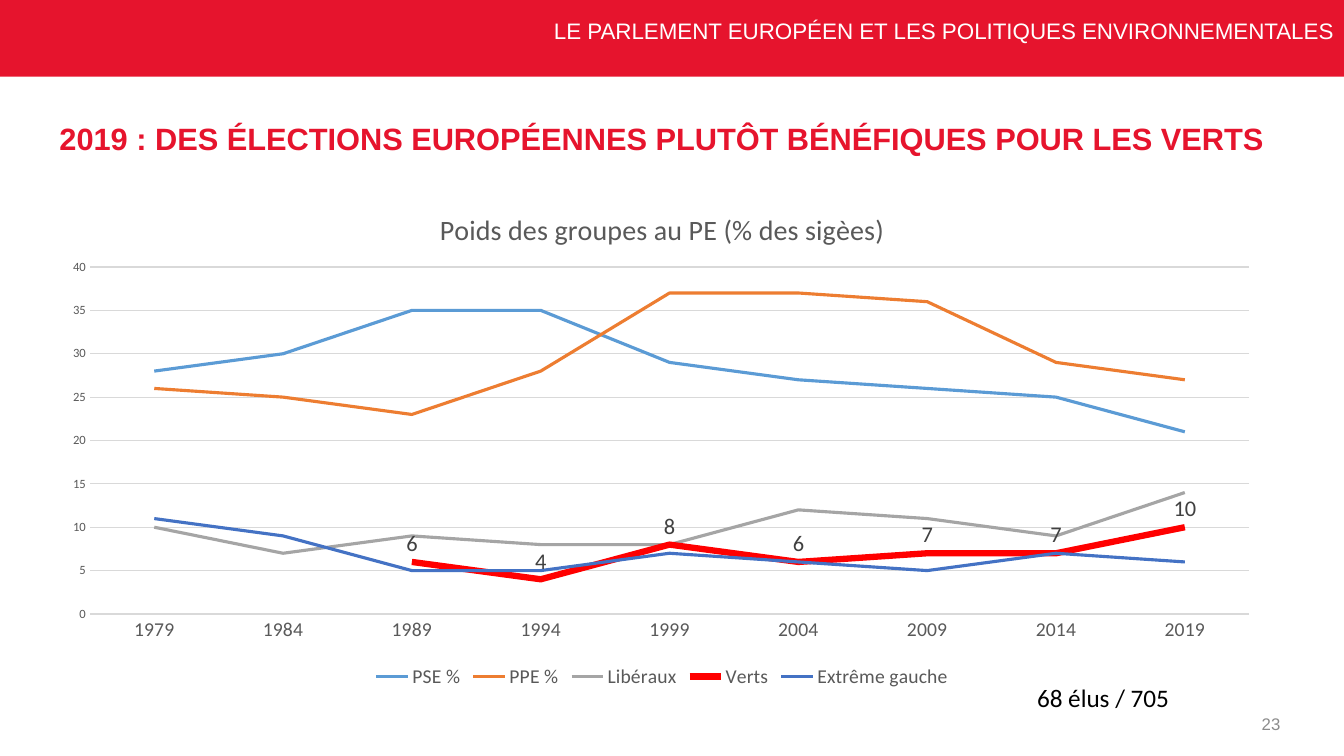
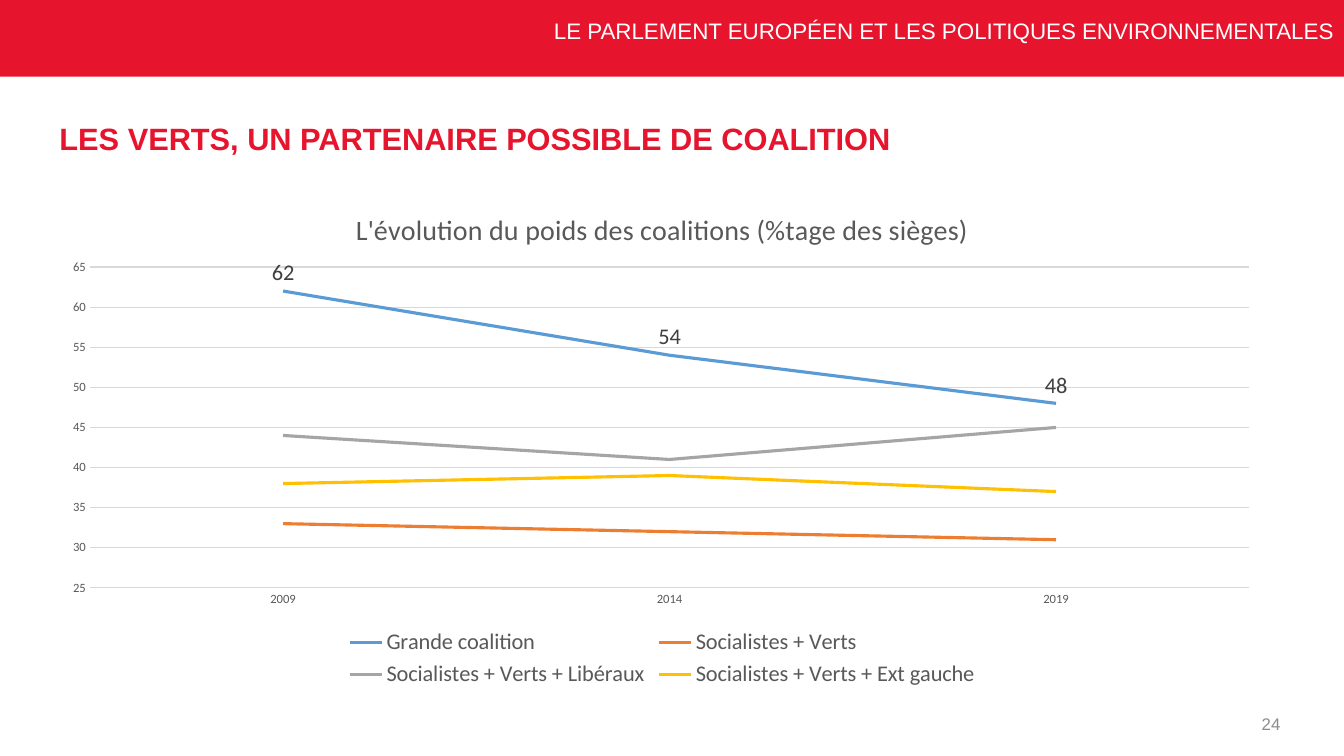
from lxml import etree
from pptx import Presentation
from pptx.chart.data import CategoryChartData
from pptx.dml.color import RGBColor
from pptx.enum import chart as ch, shapes, text
from pptx.oxml import ns
from pptx.util import Pt

# Shared style
RED = RGBColor(0xE6, 0x14, 0x2D)
WHITE = RGBColor(0xFF, 0xFF, 0xFF)
BLACK = RGBColor(0x00, 0x00, 0x00)
PAGE_GREY = RGBColor(0x8C, 0x8C, 0x8C)
TEXT_GREY = RGBColor(0x59, 0x59, 0x59)
LABEL_GREY = RGBColor(0x40, 0x40, 0x40)
GRID_GREY = RGBColor(0xD9, 0xD9, 0xD9)
LINE_BLUE = RGBColor(0x5B, 0x9B, 0xD5)
LINE_ORANGE = RGBColor(0xED, 0x7D, 0x31)
LINE_GREY = RGBColor(0xA5, 0xA5, 0xA5)
LINE_RED = RGBColor(0xFF, 0x00, 0x00)
LINE_NAVY = RGBColor(0x44, 0x72, 0xC4)
LINE_YELLOW = RGBColor(0xFF, 0xC0, 0x00)
HEADING_FONT, CHART_FONT = "Arial", "Calibri"
HEADER = "LE PARLEMENT EUROPÉEN ET LES POLITIQUES ENVIRONNEMENTALES"

# Left, top, width, height in points
SLIDE_W, SLIDE_H, BAND_H = 960, 540, 54.7
TITLE_BOX = (35.3, 72.7, 887, 54.7)
HEADER_BOX = (253.4, 10.8, 707, 27.4)
CHART_BOX = (35.3, 135.4, 875.5, 359.3)
PAGE_BOX = (697.7, 502.6, 224, 28.8)
SEATS_BOX = (733.7, 483.8, 110.2, 28.8)


def points(box):
    return [Pt(value) for value in box]


def set_font(font, size, color, name=CHART_FONT, bold=False):
    font.size, font.name, font.bold = Pt(size), name, bold
    font.color.rgb = color


def write(frame, words, size, color, name, align=text.PP_ALIGN.LEFT,
          anchor=text.MSO_ANCHOR.TOP, bold=False, spacing=1.0):
    frame.auto_size = text.MSO_AUTO_SIZE.NONE
    frame.vertical_anchor = anchor
    paragraph = frame.paragraphs[0]
    paragraph.alignment = align
    paragraph.line_spacing = spacing
    paragraph.space_before = Pt(0)
    run = paragraph.add_run()
    run.text = words
    set_font(run.font, size, color, name, bold)


def prepare_layout(prs):
    """Place the layout's title and body, and move the red band into it."""
    layout = prs.slide_layouts[2]
    for holder, box in zip(layout.placeholders, (TITLE_BOX, HEADER_BOX)):
        holder.left, holder.top, holder.width, holder.height = points(box)
    return layout


def add_band(slide):
    band = slide.shapes.add_shape(shapes.MSO_SHAPE.RECTANGLE,
                                  *points((0, 0, SLIDE_W, BAND_H)))
    band.shadow.inherit = False
    band.fill.solid()
    band.fill.fore_color.rgb = RED
    band.line.fill.background()
    slide.slide_layout.shapes.element.insert(2, band.element)


def add_text_box(slide, box, words, size, color, name, wrap=True, **style):
    frame = slide.shapes.add_textbox(*points(box)).text_frame
    frame.word_wrap = wrap
    write(frame, words, size, color, name, **style)


def add_page(prs, layout, title, number):
    slide = prs.slides.add_slide(layout)
    heading = slide.shapes.title.text_frame
    heading.margin_right = Pt(0)
    write(heading, title, 22, RED, HEADING_FONT, bold=True, spacing=0.9,
          anchor=text.MSO_ANCHOR.MIDDLE)
    write(slide.placeholders[1].text_frame, HEADER, 16, WHITE, HEADING_FONT,
          align=text.PP_ALIGN.RIGHT, spacing=0.9)
    add_text_box(slide, PAGE_BOX, str(number), 12, PAGE_GREY, HEADING_FONT,
                 align=text.PP_ALIGN.RIGHT, anchor=text.MSO_ANCHOR.MIDDLE)
    return slide


def place_plot(chart, height):
    """Fix the inner plot area, as fractions of the chart."""
    plot_area = chart.element.find(".//" + ns.qn("c:plotArea"))
    for old in plot_area.findall(ns.qn("c:layout")):
        plot_area.remove(old)
    layout = etree.Element(ns.qn("c:layout"))
    manual = etree.SubElement(layout, ns.qn("c:manualLayout"))
    settings = {"layoutTarget": "inner", "xMode": "edge", "yMode": "edge",
                "x": 0.033, "y": 0.154, "w": 0.946, "h": height}
    for tag, value in settings.items():
        etree.SubElement(manual, ns.qn("c:" + tag)).set("val", str(value))
    plot_area.insert(0, layout)


def style_axes(chart, low, high, category_size):
    years, values = chart.category_axis, chart.value_axis
    for axis, size in ((years, category_size), (values, 9)):
        axis.major_tick_mark = axis.minor_tick_mark = ch.XL_TICK_MARK.NONE
        set_font(axis.tick_labels.font, size, TEXT_GREY)
    values.minimum_scale, values.maximum_scale = low, high
    values.major_unit = 5
    values.format.line.fill.background()
    for line in (years.format.line, values.major_gridlines.format.line):
        line.color.rgb = GRID_GREY
        line.width = Pt(0.75)


def add_line_chart(slide, title, years, groups, labelled, scale,
                   category_size, legend_size, plot_height):
    """groups: (name, values, colour, line width) for each series."""
    data = CategoryChartData()
    data.categories = years
    for name, values, _, _ in groups:
        data.add_series(name, values)
    chart = slide.shapes.add_chart(ch.XL_CHART_TYPE.LINE, *points(CHART_BOX),
                                   data).chart
    set_font(chart.font, 10, BLACK)
    run = chart.chart_title.text_frame.paragraphs[0].add_run()
    run.text = title
    set_font(run.font, 20, TEXT_GREY)
    chart.chart_title.include_in_layout = False
    chart.has_legend = True
    chart.legend.position = ch.XL_LEGEND_POSITION.BOTTOM
    chart.legend.include_in_layout = False
    set_font(chart.legend.font, legend_size, TEXT_GREY)
    style_axes(chart, *scale, category_size)
    place_plot(chart, plot_height)

    plot = chart.plots[0]
    plot.vary_by_categories = False
    for series, (name, _, color, width) in zip(plot.series, groups):
        series.smooth = False
        series.format.line.color.rgb = color
        series.format.line.width = Pt(width)
        if name == labelled:
            labels = series.data_labels
            labels.show_value = True
            labels.position = ch.XL_LABEL_POSITION.ABOVE
            set_font(labels.font, 16, LABEL_GREY)


def main():
    prs = Presentation()
    prs.slide_width, prs.slide_height = Pt(SLIDE_W), Pt(SLIDE_H)
    layout = prepare_layout(prs)

    # Weight of the groups
    slide = add_page(prs, layout, "2019 : DES ÉLECTIONS EUROPÉENNES PLUTÔT "
                     "BÉNÉFIQUES POUR LES VERTS", 23)
    add_band(slide)
    add_line_chart(
        slide, "Poids des groupes au PE (% des sigèes)",
        [str(year) for year in range(1979, 2020, 5)],
        [("PSE %", (28, 30, 35, 35, 29, 27, 26, 25, 21), LINE_BLUE, 2.25),
         ("PPE %", (26, 25, 23, 28, 37, 37, 36, 29, 27), LINE_ORANGE, 2.25),
         ("Libéraux", (10, 7, 9, 8, 8, 12, 11, 9, 14), LINE_GREY, 2.25),
         ("Verts", (None, None, 6, 4, 8, 6, 7, 7, 10), LINE_RED, 4.5),
         ("Extrême gauche", (11, 9, 5, 5, 7, 6, 5, 7, 6), LINE_NAVY, 2.25)],
        labelled="Verts", scale=(0, 40), category_size=14, legend_size=14,
        plot_height=0.69)
    add_text_box(slide, SEATS_BOX, "68 élus / 705", 18, BLACK, CHART_FONT,
                 wrap=False)

    # Weight of the coalitions
    slide = add_page(prs, layout,
                     "LES VERTS, UN PARTENAIRE POSSIBLE DE COALITION", 24)
    add_line_chart(
        slide, "L'évolution du poids des coalitions (%tage des sièges)",
        ["2009", "2014", "2019"],
        [("Grande coalition", (62, 54, 48), LINE_BLUE, 2.25),
         ("Socialistes + Verts", (33, 32, 31), LINE_ORANGE, 2.25),
         ("Socialistes + Verts + Libéraux", (44, 41, 45), LINE_GREY, 2.25),
         ("Socialistes + Verts + Ext gauche", (38, 39, 37), LINE_YELLOW,
          2.25)],
        labelled="Grande coalition", scale=(25, 65), category_size=9,
        legend_size=16, plot_height=0.638)

    prs.save("out.pptx")


if __name__ == "__main__":
    main()
